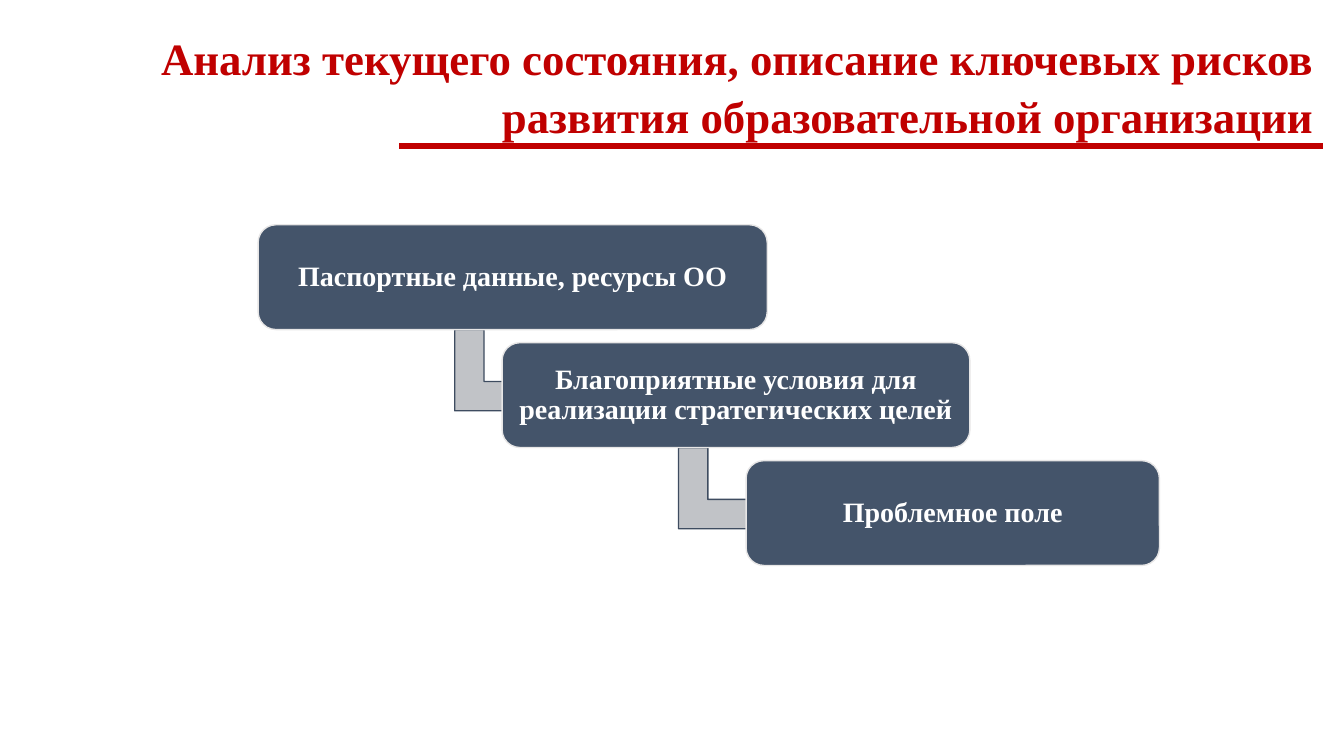
from pptx import Presentation
from pptx.dml.color import RGBColor
from pptx.enum.shapes import MSO_CONNECTOR, MSO_SHAPE
from pptx.enum.text import MSO_ANCHOR, MSO_AUTO_SIZE, PP_ALIGN
from pptx.oxml.ns import qn
from pptx.util import Emu, Pt
from lxml import etree

STRAIGHT = MSO_CONNECTOR.STRAIGHT
ROUNDED, BENT_ARROW = MSO_SHAPE.ROUNDED_RECTANGLE, MSO_SHAPE.BENT_UP_ARROW
TOP, MIDDLE = MSO_ANCHOR.TOP, MSO_ANCHOR.MIDDLE
RIGHT, CENTER = PP_ALIGN.RIGHT, PP_ALIGN.CENTER

RED = RGBColor(0xC0, 0x00, 0x00)
SLATE = RGBColor(0x44, 0x54, 0x6A)
DARK_SLATE = RGBColor(0x3E, 0x4C, 0x60)
GREY = RGBColor(0xC1, 0xC3, 0xC7)
PALE = RGBColor(0xE7, 0xE6, 0xE6)
WHITE = RGBColor(0xFF, 0xFF, 0xFF)
FONT = "Times New Roman"


def px(length):
    """Turn px (100 to the inch) into EMU."""
    return Emu(length * 9144)


def write(frame, text, size, color, align, anchor, spacing):
    frame.word_wrap = True
    frame.auto_size = MSO_AUTO_SIZE.NONE
    frame.vertical_anchor = anchor
    para = frame.paragraphs[0]
    para.alignment = align
    para.line_spacing = spacing
    span = para.add_run()
    span.text = text
    span.font.name = FONT
    span.font.size = Pt(size)
    span.font.bold = True
    span.font.color.rgb = color


deck = Presentation()
deck.slide_width, deck.slide_height = px(1333), px(750)
page = deck.slides.add_slide(deck.slide_layouts[5])

# Title
title = page.shapes.title
title.left, title.top, title.width, title.height = px(62), px(22), px(1251), px(148)
write(title.text_frame,
      "Анализ текущего состояния, описание ключевых рисков развития образовательной организации",
      32, RED, RIGHT, TOP, 1.07)

# Rule under the title
rule = page.shapes.add_connector(STRAIGHT, px(396), px(145), px(1312), px(145))
rule.line.color.rgb = RED
rule.line.width = Pt(4.5)
etree.SubElement(rule._element.spPr, qn("a:effectLst"))

# Staircase of steps: left, width, text, left of the arrow leading on
STEP_TOP, STEP_HEIGHT, STEP_PITCH = 223, 104, 117
ARROW_DROP = 98
steps = [
    (256, 505, "Паспортные данные, ресурсы ОО", 457),
    (498, 464, "Благоприятные условия для реализации стратегических целей", 679),
    (740, 410, "Проблемное поле", None),
]
for index, (left, width, text, arrow_left) in enumerate(steps):
    top = STEP_TOP + index * STEP_PITCH
    if arrow_left is not None:
        arrow = page.shapes.add_shape(BENT_ARROW, px(arrow_left), px(top + ARROW_DROP),
                                      px(88), px(100))
        arrow.rotation = 90
        for position, value in enumerate((0.33, 0.25, 0.36)):
            arrow.adjustments[position] = value
        arrow.shadow.inherit = False
        arrow.fill.solid()
        arrow.fill.fore_color.rgb = GREY
        arrow.line.color.rgb = DARK_SLATE
        arrow.line.width = Pt(1)

    box = page.shapes.add_shape(ROUNDED, px(left), px(top), px(width), px(STEP_HEIGHT))
    box.adjustments[0] = 0.17
    box.shadow.inherit = False
    box.fill.solid()
    box.fill.fore_color.rgb = SLATE
    box.line.color.rgb = PALE
    box.line.width = Pt(1)
    frame = box.text_frame
    frame.margin_left = frame.margin_right = px(8)
    frame.margin_top = frame.margin_bottom = px(8)
    write(frame, text, 20, WHITE, CENTER, MIDDLE, 0.9)

deck.save("out.pptx")
